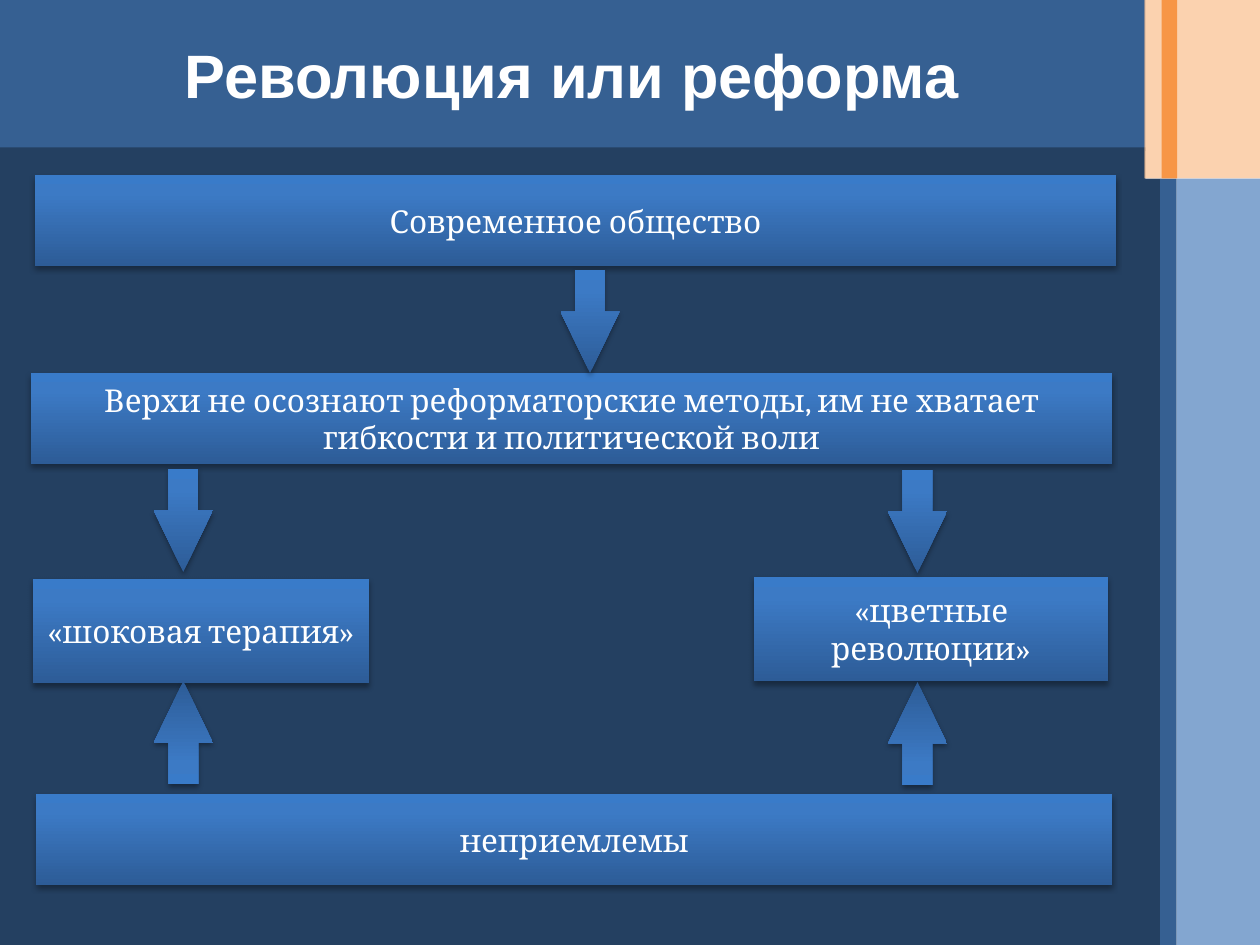
from dataclasses import dataclass

from lxml import etree
from pptx import Presentation
from pptx.dml.color import RGBColor
from pptx.enum.shapes import MSO_SHAPE as Shape
from pptx.enum.text import MSO_ANCHOR as Anchor, PP_ALIGN as Align
from pptx.oxml import parse_xml
from pptx.oxml.ns import nsdecls, qn
from pptx.util import Cm, Pt


@dataclass(frozen=True)
class Theme:
    header: str = "366092"
    body: str = "244061"
    peach: str = "FABF8E"
    orange: str = "F79646"
    side: str = "4F81BD"
    text: str = "FFFFFF"
    gradient: tuple = ((0, "2D5C97"), (80, "3C7AC5"), (100, "397BC9"))
    title_size: int = 35
    box_size: int = 18
    title_font: str = "Arial"
    box_font: str = "Cambria"


theme = Theme()
SHADOW = (
    f'<a:outerShdw {nsdecls("a")} blurRad="39370" dist="22860" dir="5400000" '
    'rotWithShape="0"><a:srgbClr val="000000"><a:alpha val="35000"/>'
    '</a:srgbClr></a:outerShdw>'
)
TITLE_SHADOW = (
    f'<a:effectLst {nsdecls("a")}><a:outerShdw blurRad="38100" dist="38100" '
    'dir="2700000"><a:srgbClr val="000000"><a:alpha val="43000"/>'
    '</a:srgbClr></a:outerShdw></a:effectLst>'
)


def write(sp, text, font=theme.box_font, size=theme.box_size, bold=False):
    tf = sp.text_frame
    tf.word_wrap = True
    tf.vertical_anchor = Anchor.MIDDLE
    p = tf.paragraphs[0]
    p.alignment = Align.CENTER
    r = p.add_run()
    r.text = text
    r.font.name = font
    r.font.size = Pt(size)
    r.font.bold = bold
    r.font.color.rgb = RGBColor.from_string(theme.text)
    return r


def add_raised(kind, left, top, width, height):
    """Add a shape with the vertical blue gradient and a soft shadow."""
    sp = s.shapes.add_shape(kind, Cm(left), Cm(top), Cm(width), Cm(height))
    sp.line.fill.background()
    sp.fill.gradient()
    sp.fill.gradient_angle = 90
    stops = sp._element.spPr.find(".//" + qn("a:gsLst"))
    for stop in list(stops):
        stops.remove(stop)
    for pos, color in theme.gradient:
        gs = etree.SubElement(stops, qn("a:gs"), pos=str(pos * 1000))
        etree.SubElement(gs, qn("a:srgbClr"), val=color)
    sp.shadow.inherit = False
    sp._element.spPr.find(qn("a:effectLst")).append(parse_xml(SHADOW))
    return sp


prs = Presentation()
prs.slide_width, prs.slide_height = Cm(25.4), Cm(19.05)
s = prs.slides.add_slide(prs.slide_layouts[6])

# Background panels: left, top, width, height, colour, opacity in percent
panels = [
    (0, 0, 23.09, 3.05, theme.header, 100),
    (0, 2.97, 23.09, 16.08, theme.body, 100),
    (22.94, 3.6, 0.45, 15.45, theme.body, 100),
    (23.07, 0, 2.33, 3.6, theme.peach, 70),
    (23.73, 3.6, 1.67, 15.45, theme.side, 70),
    (23.39, 3.6, 0.33, 15.45, theme.header, 100),
    (23.42, 0, 0.31, 3.6, theme.orange, 100),
]
for left, top, width, height, color, opacity in panels:
    sp = s.shapes.add_shape(Shape.RECTANGLE, Cm(left), Cm(top), Cm(width), Cm(height))
    sp.shadow.inherit = False
    sp.line.fill.background()
    sp.fill.solid()
    sp.fill.fore_color.rgb = RGBColor.from_string(color)
    if opacity < 100:
        clr = sp._element.spPr.find(".//" + qn("a:srgbClr"))
        etree.SubElement(clr, qn("a:alpha"), val=str(opacity * 1000))

# Title
title = s.shapes.add_textbox(0, 0, Cm(23.06), Cm(2.97))
r = write(title, "Революция или реформа", font=theme.title_font,
          size=theme.title_size, bold=True)
r.font._element.find(qn("a:solidFill")).addnext(parse_xml(TITLE_SHADOW))

# Boxes of the scheme
boxes = [
    ("Современное общество", 0.71, 3.53, 21.79, 1.83),
    ("Верхи не осознают реформаторские методы, им не хватает гибкости "
     "и политической воли", 0.63, 7.52, 21.79, 1.83),
    ("«шоковая терапия»", 0.66, 11.67, 6.78, 2.11),
    ("«цветные революции»", 15.2, 11.63, 7.14, 2.11),
    ("неприемлемы", 0.73, 16.01, 21.69, 1.83),
]
for text, *frame in boxes:
    write(add_raised(Shape.RECTANGLE, *frame), text)

# Block arrows: left, top, rotation
arrows = [
    (11.3, 5.44, 0),
    (3.1, 9.45, 0),
    (17.9, 9.47, 0),
    (3.1, 13.73, 180),
    (17.9, 13.75, 180),
]
for left, top, rotation in arrows:
    sp = add_raised(Shape.DOWN_ARROW, left, top, 1.19, 2.08)
    sp.adjustments[0] = 0.5
    sp.adjustments[1] = 1.04
    sp.rotation = rotation

prs.save("out.pptx")
